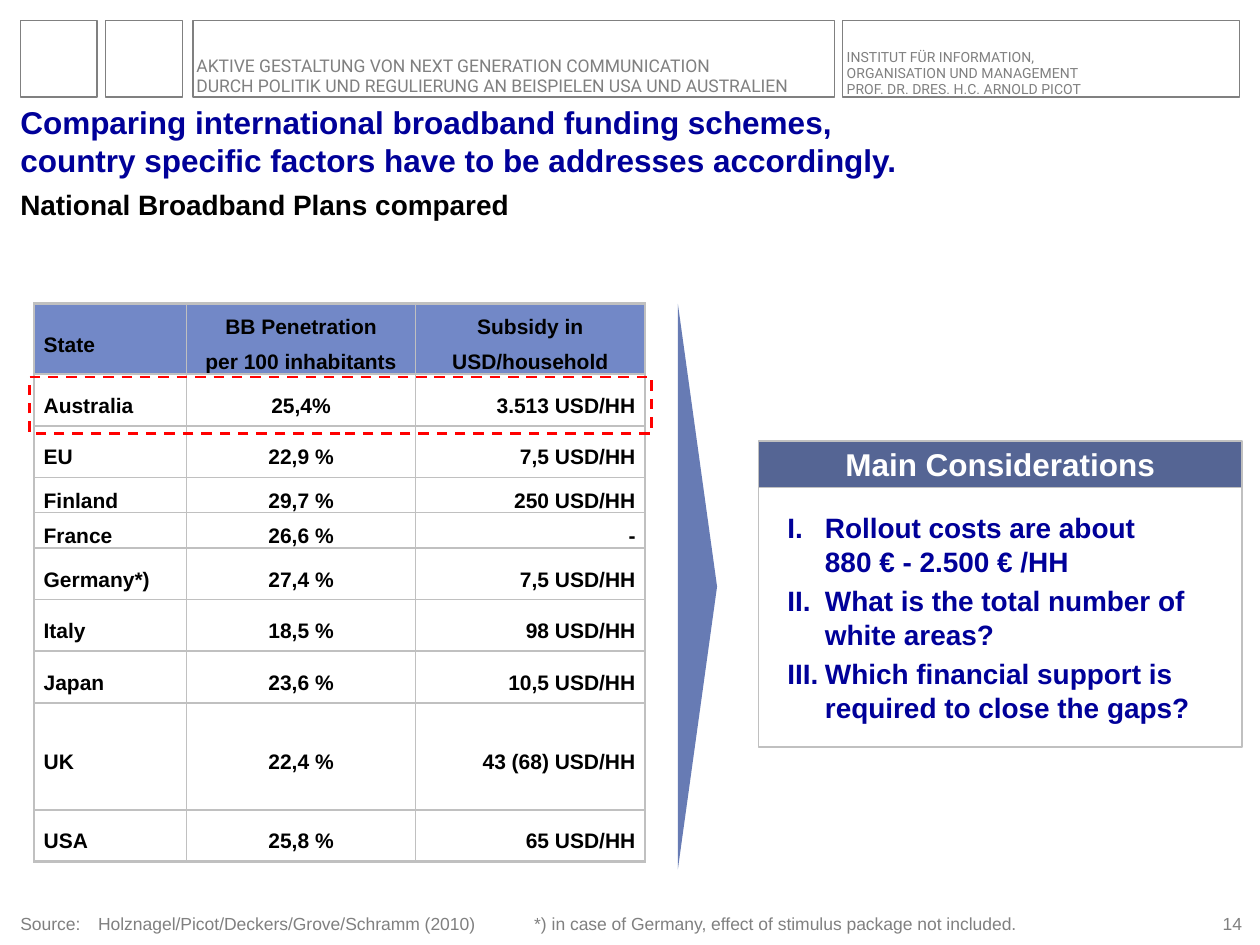
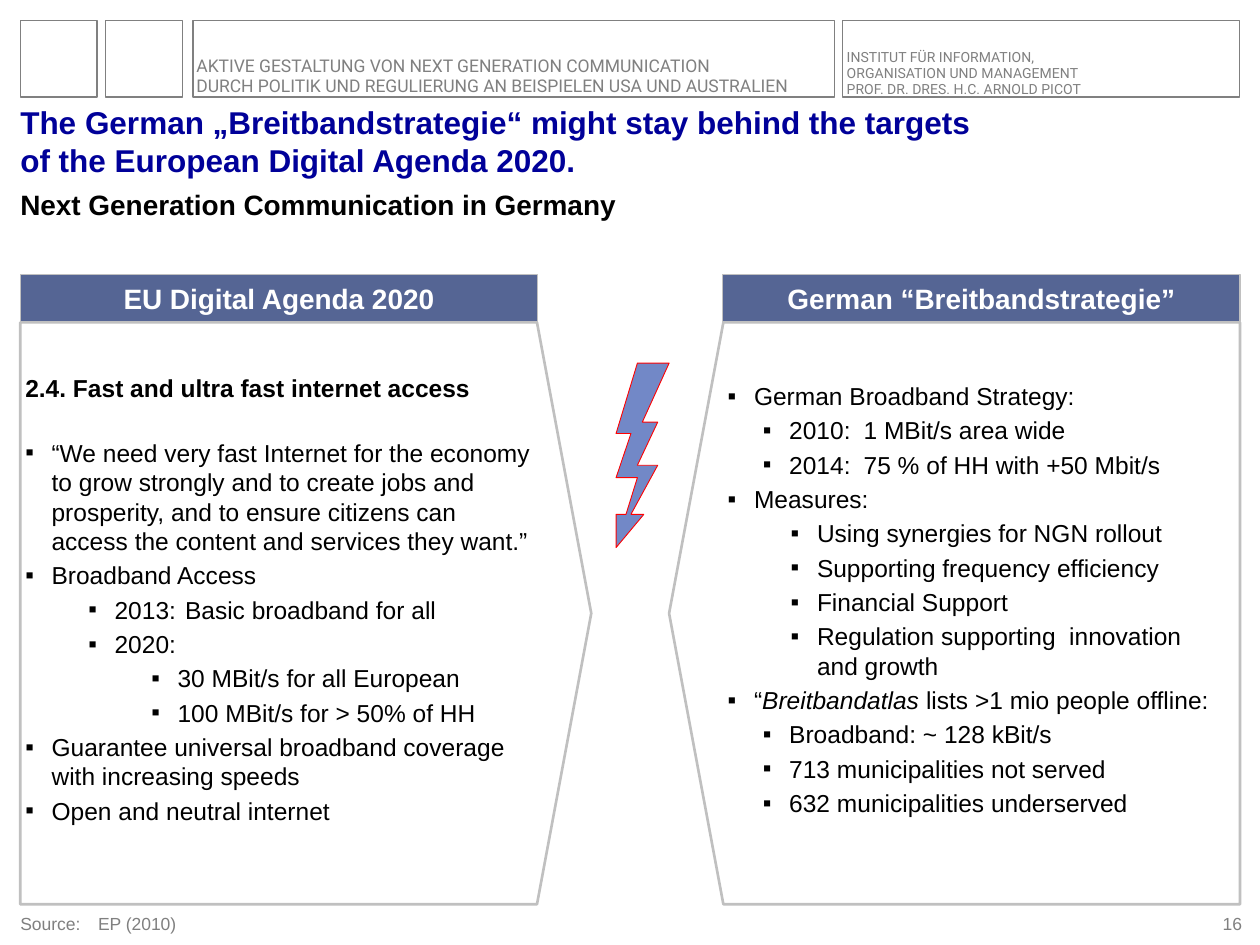
from collections import namedtuple
from copy import deepcopy

from lxml.etree import SubElement
from pptx import Presentation
from pptx.dml.color import RGBColor
from pptx.enum.dml import MSO_LINE
from pptx.enum.shapes import MSO_SHAPE
from pptx.enum.text import MSO_ANCHOR, MSO_AUTO_SIZE, PP_ALIGN
from pptx.oxml.ns import qn
from pptx.util import Cm, Pt

# Shared colours, fonts and measures (lengths in cm)
NAVY = RGBColor(0x00, 0x00, 0x99)
BLACK = RGBColor(0x00, 0x00, 0x00)
WHITE = RGBColor(0xFF, 0xFF, 0xFF)
GREY = RGBColor(0x80, 0x80, 0x80)
SILVER = RGBColor(0xC0, 0xC0, 0xC0)
RED = RGBColor(0xFF, 0x00, 0x00)
BAR_BLUE = RGBColor(0x55, 0x65, 0x94)
ARROW_BLUE = RGBColor(0x67, 0x7B, 0xB4)
HEAD_BLUE = RGBColor(0x72, 0x88, 0xC7)
BODY_FONT, HEADER_FONT = "Arial", "Roboto"
MARGIN = 0.41
BAR_HEIGHT = 0.94
BULLET_INDENT = 0.53

Box = namedtuple("Box", "left top width height")
Item = namedtuple("Item", "text level indent tab", defaults=(0, BULLET_INDENT, None))

COUNTRIES = [
    ("Australia", "25,4%", "3.513 USD/HH"),
    ("EU", "22,9 %", "7,5 USD/HH"),
    ("Finland", "29,7 %", "250 USD/HH"),
    ("France", "26,6 %", "-"),
    ("Germany*)", "27,4 %", "7,5 USD/HH"),
    ("Italy", "18,5 %", "98 USD/HH"),
    ("Japan", "23,6 %", "10,5 USD/HH"),
    ("UK", "22,4 %", "43 (68) USD/HH"),
    ("USA", "25,8 %", "65 USD/HH"),
]
TABLE_HEAD = ("State", "BB Penetration\vper 100 inhabitants", "Subsidy in USD/household")
ROW_HEIGHTS = (1.4, 1.04, 1.04, 0.48, 0.48, 1.04, 1.04, 1.04, 2.16, 1.04)
COLUMN_WIDTHS = (3.07, 4.62, 4.62)

CONSIDERATIONS = [
    Item("Rollout costs are about\v880 € - 2.500 € /HH", indent=1.24),
    Item("What is the total number of white areas?", indent=1.24),
    Item("Which financial support is required to close the gaps?", indent=1.24),
]
EU_AGENDA = [
    Item("2.4. Fast and ultra fast internet access"),
    Item("“We need very fast Internet for the economy to grow strongly and to create jobs "
         "and prosperity, and to ensure citizens can access the content and services "
         "they want.”"),
    Item("Broadband Access"),
    Item("2013:\tBasic broadband for all", 1, 1.8, 3.22),
    Item("2020:", 1, 1.8),
    Item("30 MBit/s for all European", 2, 3.07),
    Item("100 MBit/s for > 50% of HH", 2, 3.07),
    Item("Guarantee universal broadband coverage with increasing speeds"),
    Item("Open and neutral internet"),
]
# Words between asterisks are set in italics
GERMAN_STRATEGY = [
    Item("German Broadband Strategy:"),
    Item("2010:\t1 MBit/s area wide", 1, 1.24, 2.74),
    Item("2014:\t75 % of HH with +50 Mbit/s", 1, 1.24, 2.74),
    Item("Measures:"),
    Item("Using synergies for NGN rollout", 1, 1.8),
    Item("Supporting frequency efficiency", 1, 1.8),
    Item("Financial Support", 1, 1.8),
    Item("Regulation supporting  innovation\vand growth", 1, 1.8),
    Item("“*Breitbandatlas* lists >1 mio people offline:"),
    Item("Broadband: ~ 128 kBit/s", 1, 1.24),
    Item("713 municipalities not served", 1, 1.24),
    Item("632 municipalities underserved", 1, 1.24),
]
BOLT = [(0.43, 0), (0, 1.42), (0.3, 1.42), (0, 2.31), (0.43, 2.31), (0.2, 3.05), (0, 3.05),
        (0, 3.72), (0.56, 3.05), (0.3, 3.05), (0.84, 2.06), (0.43, 2.06), (0.84, 1.19),
        (0.53, 1.19), (1.07, 0)]


# Helpers
def in_cm(box):
    return [Cm(length) for length in box]


def move(shape, box):
    shape.left, shape.top, shape.width, shape.height = in_cm(box)


def paint(shape, fill=None, line=None, width=0.75):
    shape.shadow.inherit = False
    if fill is None:
        shape.fill.background()
    else:
        shape.fill.solid()
        shape.fill.fore_color.rgb = fill
    if line is None:
        shape.line.fill.background()
    else:
        shape.line.color.rgb = line
        shape.line.width = Pt(width)


def add_painted(slide, kind, box, **look):
    shape = slide.shapes.add_shape(kind, *in_cm(box))
    paint(shape, **look)
    return shape


def style(paragraph, size, color, bold=False, font=BODY_FONT):
    for run in paragraph.runs:
        run.font.size, run.font.bold, run.font.name = Pt(size), bold, font
        run.font.color.rgb = color
    # Line breaks take the size of the text around them
    for line_break in paragraph._p.findall(qn("a:br")):
        line_break.insert(0, deepcopy(paragraph.runs[0]._r.rPr))


def set_frame(frame, anchor, inset=0):
    frame.word_wrap = True
    frame.auto_size = MSO_AUTO_SIZE.NONE
    frame.vertical_anchor = anchor
    frame.margin_left = frame.margin_right = Cm(inset)
    frame.margin_top = frame.margin_bottom = Cm(inset)


def add_label(slide, box, text, anchor=MSO_ANCHOR.BOTTOM):
    frame = slide.shapes.add_textbox(*in_cm(box)).text_frame
    set_frame(frame, anchor)
    label = frame.paragraphs[0]
    label.text = text
    return label


def set_indent(paragraph, left, hanging):
    properties = paragraph._p.get_or_add_pPr()
    properties.set("marL", str(Cm(left)))
    properties.set("indent", str(-Cm(hanging)))
    return properties


def add_tab(properties, position):
    tabs = SubElement(properties, qn("a:tabLst"))
    SubElement(tabs, qn("a:tab"), pos=str(Cm(position)), algn="l")


# Regions shared by both slides
def draw_header(slide):
    for left, width in ((MARGIN, 1.55), (2.13, 1.55), (3.89, 12.93), (16.99, 8)):
        add_painted(slide, MSO_SHAPE.RECTANGLE, Box(left, MARGIN, width, 1.55), line=GREY)
    talk = ("AKTIVE GESTALTUNG VON NEXT GENERATION COMMUNICATION\v"
            "DURCH POLITIK UND REGULIERUNG AN BEISPIELEN USA UND AUSTRALIEN")
    institute = ("INSTITUT FÜR INFORMATION,\vORGANISATION UND MANAGEMENT\v"
                 "PROF. DR. DRES. H.C. ARNOLD PICOT")
    for box, text, size in ((Box(3.96, 0.91, 12.85, 1.04), talk, 10),
                            (Box(17.07, 0.79, 6.6, 1.17), institute, 8)):
        label = add_label(slide, box, text)
        label.line_spacing = 0.95
        style(label, size, GREY, font=HEADER_FONT)


def draw_titles(slide, title, subtitle):
    headline = slide.shapes.title
    move(headline, Box(MARGIN, 2.13, 24.59, 1.47))
    set_frame(headline.text_frame, MSO_ANCHOR.BOTTOM)
    line = headline.text_frame.paragraphs[0]
    line.text = title
    line.alignment = PP_ALIGN.LEFT
    style(line, 18, NAVY, bold=True)
    topic = add_label(slide, Box(MARGIN, 3.78, 19.4, 0.69), subtitle, MSO_ANCHOR.TOP)
    style(topic, 16, BLACK, bold=True)


def draw_footer(slide, source, number):
    credit = add_label(slide, Box(MARGIN, 18.39, 22.3, 0.43), "Source:\t " + source)
    add_tab(set_indent(credit, 1.47, 1.47), 11.94)
    style(credit, 10, GREY)
    page = add_label(slide, Box(24.33, 18.39, 0.71, 0.43), number)
    page.alignment = PP_ALIGN.RIGHT
    style(page, 10, GREY)


def add_slide(deck, layout, title, subtitle, source, number):
    slide = deck.slides.add_slide(deck.slide_layouts[layout])
    draw_header(slide)
    draw_titles(slide, title, subtitle)
    draw_footer(slide, source, number)
    return slide


def draw_bar(slide, box, text, size):
    bar = add_painted(slide, MSO_SHAPE.RECTANGLE, box, fill=BAR_BLUE, line=SILVER)
    set_frame(bar.text_frame, MSO_ANCHOR.MIDDLE, 0.1)
    caption = bar.text_frame.paragraphs[0]
    caption.text = text
    caption.alignment = PP_ALIGN.CENTER
    style(caption, size, WHITE, bold=True)


def fill_list(placeholder, box, items, size, color, numbered=False, headed=False):
    move(placeholder, box)
    frame = placeholder.text_frame
    set_frame(frame, MSO_ANCHOR.MIDDLE, 0.1)
    for index, item in enumerate(items):
        entry = frame.add_paragraph() if index else frame.paragraphs[0]
        is_heading = headed and index == 0
        entry.level = item.level
        properties = set_indent(entry, item.indent, 0.76 if numbered else BULLET_INDENT)
        if is_heading:
            SubElement(properties, qn("a:buNone"))
        else:
            tint = SubElement(properties, qn("a:buClr"))
            SubElement(tint, qn("a:srgbClr"), val=str(color))
            SubElement(properties, qn("a:buFont"), typeface=BODY_FONT)
            if numbered:
                SubElement(properties, qn("a:buAutoNum"), type="romanUcPeriod")
            else:
                SubElement(properties, qn("a:buChar"), char="▪")
        if item.tab:
            add_tab(properties, item.tab)
        entry.alignment = PP_ALIGN.LEFT
        entry.space_before = Pt(0)
        entry.space_after = Pt(20 if is_heading else 0.2 * size)
        if "*" in item.text:
            for part, words in enumerate(item.text.split("*")):
                run = entry.add_run()
                run.text = words
                run.font.italic = part % 2 == 1
        else:
            entry.text = item.text
        style(entry, size, color, bold=numbered or is_heading)


# Regions of the comparison slide
def set_borders(cell, widths):
    properties = cell._tc.get_or_add_tcPr()
    for position, (side, width) in enumerate(zip(("lnL", "lnR", "lnT", "lnB"), widths)):
        border = SubElement(properties, qn("a:" + side), w=str(Pt(width)))
        fill = SubElement(border, qn("a:solidFill"))
        SubElement(fill, qn("a:srgbClr"), val=str(SILVER))
        properties.insert(position, border)


def draw_country_table(slide, box):
    rows = [TABLE_HEAD] + COUNTRIES
    table = slide.shapes.add_table(len(rows), len(TABLE_HEAD), *in_cm(box)).table
    table.first_row = table.horz_banding = False
    for column, width in zip(table.columns, COLUMN_WIDTHS):
        column.width = Cm(width)
    for r, (row, values) in enumerate(zip(table.rows, rows)):
        row.height = Cm(ROW_HEIGHTS[r])
        for c, value in enumerate(values):
            cell = table.cell(r, c)
            cell.vertical_anchor = MSO_ANCHOR.MIDDLE
            cell.margin_left = cell.margin_right = Cm(0.19)
            cell.margin_top = cell.margin_bottom = 0
            if r == 0:
                cell.fill.solid()
                cell.fill.fore_color.rgb = HEAD_BLUE
            else:
                cell.fill.background()
            outer = (c == 0, c == len(values) - 1, r == 0, r == len(rows) - 1)
            set_borders(cell, [1.5 if edge else 1 for edge in outer])
            entry = cell.text_frame.paragraphs[0]
            entry.text = value
            entry.line_spacing = 1.5
            last = PP_ALIGN.RIGHT if r else PP_ALIGN.CENTER
            entry.alignment = (PP_ALIGN.LEFT, PP_ALIGN.CENTER, last)[c]
            style(entry, 12, BLACK, bold=True)
    # Dashed frame around the Australian row
    frame = add_painted(slide, MSO_SHAPE.RECTANGLE,
                        Box(box.left - 0.1, box.top + 1.48, box.width + 0.24, 1.14),
                        line=RED, width=1.5)
    frame.line.dash_style = MSO_LINE.DASH


def draw_considerations(slide, box):
    panel = slide.placeholders[1]
    body = Box(box.left, box.top + BAR_HEIGHT, box.width, box.height - BAR_HEIGHT)
    fill_list(panel, body, CONSIDERATIONS, 16, NAVY, numbered=True)
    panel.line.color.rgb = SILVER
    panel.line.width = Pt(0.75)
    draw_bar(slide, Box(*box[:3], BAR_HEIGHT), "Main Considerations", 18)


# Regions of the strategy slide
def draw_strategy(slide, box, title, placeholder, items, points_left=False, headed=False):
    text_width = 10.43
    text_left = box.left + (box.width - text_width if points_left else 0)
    draw_bar(slide, Box(text_left, box.top, text_width, BAR_HEIGHT), title, 16)
    plate = add_painted(slide, MSO_SHAPE.PENTAGON,
                        Box(box.left, box.top + 0.96, box.width, box.height - 0.96),
                        line=SILVER, width=1.5)
    plate.adjustments[0] = 0.095
    if points_left:
        plate._element.spPr.xfrm.set("flipH", "1")
    body = Box(text_left, box.top + BAR_HEIGHT, text_width, 11.2)
    fill_list(placeholder, body, items, 14, BLACK, headed=headed)


def draw_bolt(slide, left, top):
    start, *corners = [(Cm(left + x), Cm(top + y)) for x, y in BOLT]
    outline = slide.shapes.build_freeform(*start)
    outline.add_line_segments(corners, close=True)
    paint(outline.convert_to_shape(), fill=HEAD_BLUE, line=RED, width=0.5)


def main():
    deck = Presentation()
    deck.slide_width, deck.slide_height = Cm(25.4), Cm(19.05)

    comparison = add_slide(
        deck, 1,
        "Comparing international broadband funding schemes,\v"
        "country specific factors have to be addresses accordingly.",
        "National Broadband Plans compared",
        "Holznagel/Picot/Deckers/Grove/Schramm (2010) "
        "\t*) in case of Germany, effect of stimulus package not included.", "14")
    draw_country_table(comparison, Box(0.69, 6.12, 12.31, 11.5))
    pointer = add_painted(comparison, MSO_SHAPE.ISOSCELES_TRIANGLE,
                          Box(8.36, 11.43, 11.4, 0.79), fill=ARROW_BLUE)
    pointer.rotation = 90
    draw_considerations(comparison, Box(15.29, 8.89, 9.75, 6.17))

    strategies = add_slide(
        deck, 3,
        "The German „Breitbandstrategie“ might stay behind the targets\v"
        "of the European Digital Agenda 2020.",
        "Next Generation Communication in Germany", "EP (2010)", "16")
    draw_strategy(strategies, Box(MARGIN, 5.54, 11.51, 12.69), "EU Digital Agenda 2020",
                  strategies.placeholders[1], EU_AGENDA, headed=True)
    draw_strategy(strategies, Box(13.49, 5.54, 11.51, 12.69), "German “Breitbandstrategie”",
                  strategies.placeholders[2], GERMAN_STRATEGY, points_left=True)
    draw_bolt(strategies, 12.42, 7.32)

    deck.save("out.pptx")


if __name__ == "__main__":
    main()
